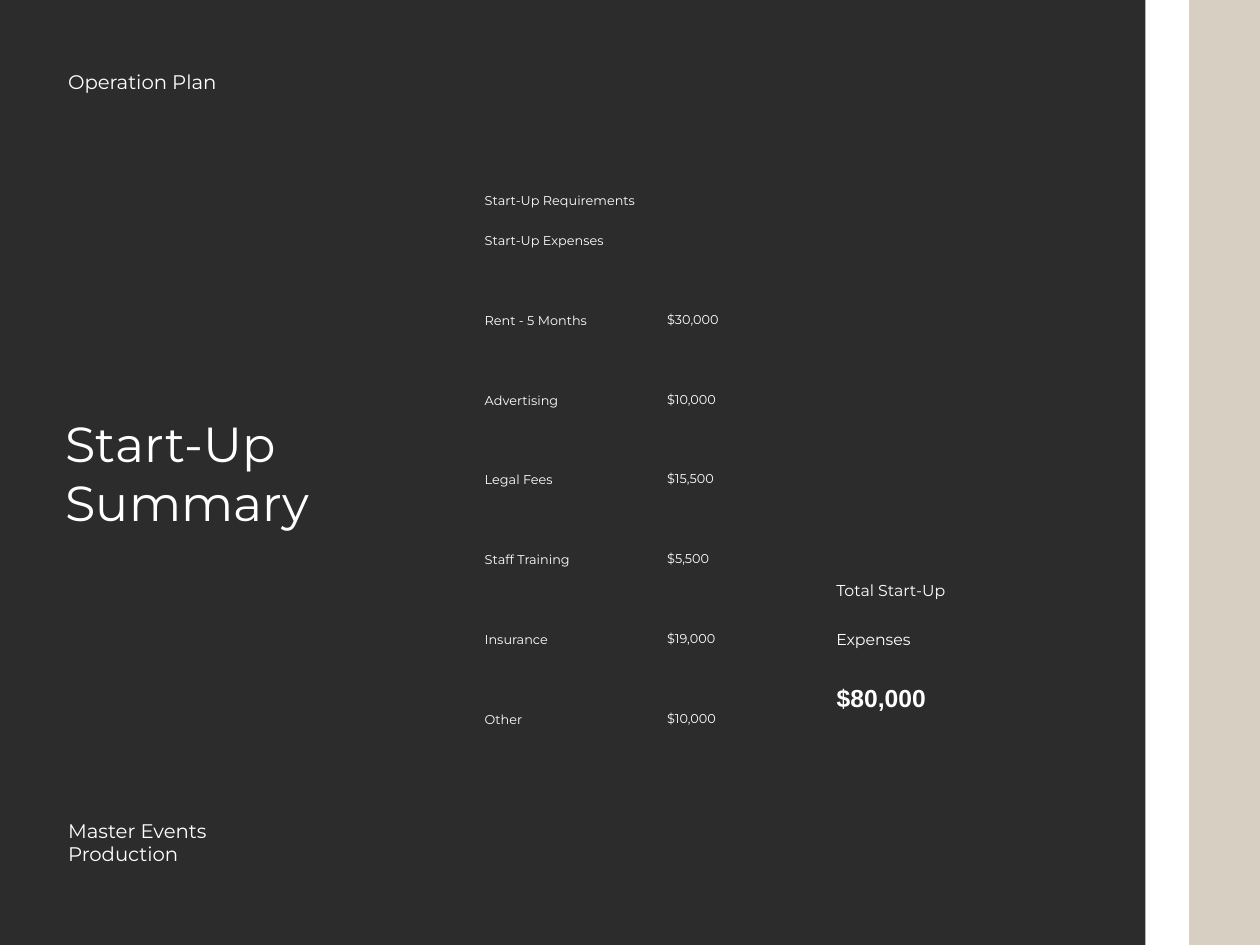
from dataclasses import dataclass

from pptx import Presentation
from pptx.dml.color import RGBColor
from pptx.enum.shapes import MSO_SHAPE as Shape
from pptx.enum.text import MSO_ANCHOR as Anchor, PP_ALIGN as Align
from pptx.util import Inches, Pt


@dataclass(frozen=True)
class Theme:
    dark: str = "2C2C2C"
    sand: str = "D7CFC1"
    white: str = "FFFFFF"
    font: str = "Montserrat"
    number_font: str = "Arial"
    title: int = 40
    total_label: int = 22
    total: int = 20
    item: int = 18
    label: int = 16
    raised: str = "30000"
    item_gap: float = 32.4
    inset: float = 0.03


EXPENSES = [
    ("Rent - 5 Months", "$30,000"),
    ("Advertising", "$10,000"),
    ("Legal Fees", "$15,500"),
    ("Staff Training", "$5,500"),
    ("Insurance", "$19,000"),
    ("Other", "$10,000"),
]
HEADINGS = ["Start-Up Requirements", "Start-Up Expenses"]


class SlideBuilder:
    """Places elements by left, top, width and height in percent of the slide."""

    def __init__(self, presentation, theme):
        self.theme = theme
        self.width = presentation.slide_width
        self.height = presentation.slide_height
        self.slide = presentation.slides.add_slide(presentation.slide_layouts[6])

    def place(self, left, top, width, height):
        return (round(self.width * left / 100), round(self.height * top / 100),
                round(self.width * width / 100), round(self.height * height / 100))

    def band(self, left, width, color):
        """Draw a full-height colour band."""
        shape = self.slide.shapes.add_shape(
            Shape.RECTANGLE, *self.place(left, 0, width, 100))
        shape.shadow.inherit = False
        shape.fill.solid()
        shape.fill.fore_color.rgb = RGBColor.from_string(color)
        shape.line.fill.background()

    def text(self, area, lines, size, font=None, bold=False,
             align=Align.LEFT, anchor=Anchor.MIDDLE):
        """Add one paragraph per line and return the paragraphs."""
        frame = self.slide.shapes.add_textbox(*self.place(*area)).text_frame
        frame.word_wrap = True
        frame.vertical_anchor = anchor
        frame.margin_left = frame.margin_right = Inches(self.theme.inset)
        frame.margin_top = frame.margin_bottom = Inches(self.theme.inset)
        frame.text = "\n".join(lines)
        for paragraph in frame.paragraphs:
            paragraph.alignment = align
            paragraph.font.name = font or self.theme.font
            paragraph.font.size = Pt(size)
            paragraph.font.bold = bold
            paragraph.font.color.rgb = RGBColor.from_string(self.theme.white)
        return frame.paragraphs

    def raised_text(self, area, lines, size, align=Align.LEFT, gap_from=None):
        """Add widely spaced superscript lines, with gaps from index gap_from on."""
        paragraphs = self.text(area, lines, size, align=align, anchor=Anchor.TOP)
        for index, paragraph in enumerate(paragraphs):
            paragraph.line_spacing = 1.5
            if gap_from is not None and index >= gap_from:
                paragraph.space_before = Pt(self.theme.item_gap)
            for run in paragraph.runs:
                run._r.get_or_add_rPr().set("baseline", self.theme.raised)


def main():
    presentation = Presentation()
    presentation.slide_width = Inches(14.22)
    presentation.slide_height = Inches(10.67)
    theme = Theme()
    builder = SlideBuilder(presentation, theme)

    builder.band(0, 90.9, theme.dark)
    builder.band(94.37, 5.63, theme.sand)

    builder.text((5.2, 7.12, 24.9, 3.1), ["Operation Plan"], theme.label)
    builder.text((5, 43.3, 21.1, 13.3), ["Start-Up Summary"], theme.title)
    builder.text((5.2, 85.1, 15.6, 8), ["Master Events Production"], theme.label)

    names, amounts = zip(*EXPENSES)
    builder.raised_text((38.26, 18.46, 19.8, 64.2), [*HEADINGS, *names], theme.item,
                        align=Align.JUSTIFY, gap_from=len(HEADINGS))
    builder.raised_text((52.74, 31.02, 6.7, 50.5), amounts, theme.item,
                        align=Align.JUSTIFY, gap_from=1)

    builder.raised_text((66.17, 59.14, 16.95, 14.4), ["Total Start-Up", "Expenses"],
                        theme.total_label)
    builder.text((65.9, 70.3, 8.1, 7), ["$80,000"], theme.total,
                 font=theme.number_font, bold=True, align=Align.CENTER)

    presentation.save("out.pptx")


if __name__ == "__main__":
    main()
